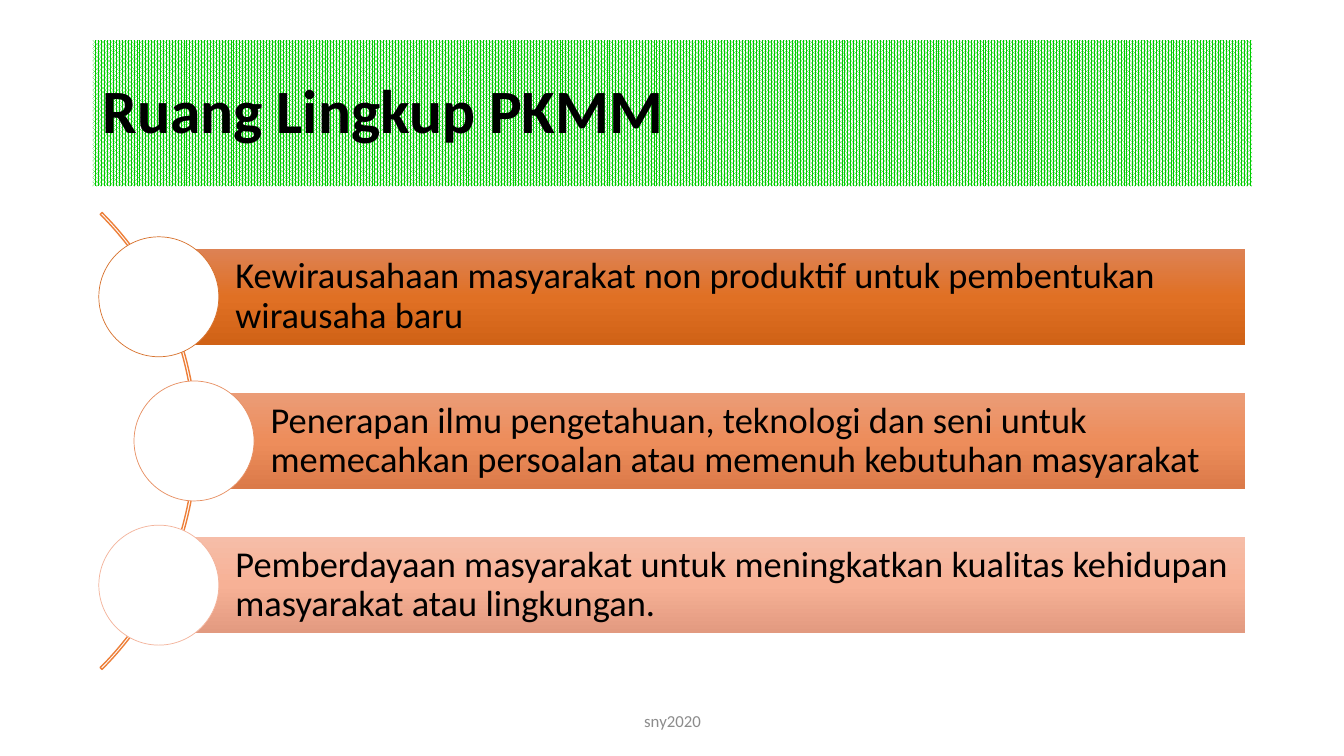
from copy import deepcopy

from pptx import Presentation
from pptx import util as u
from pptx.dml.color import RGBColor
from pptx.enum import dml, shapes, text

FONT = "Calibri"
BLACK, WHITE, GREY = "000000", "FFFFFF", "8C8C8C"
GREEN, ARC_ORANGE = "00CC00", "ED7F39"

# Horizontal and vertical values are percentages of the slide's width and height.
ARC_CENTER_X, ARC_WIDTH, ARC_HEIGHT = -9.41, 48.09, 85.47
MIDDLE_Y, ROW_PITCH = 58.33, 19.07
BAR_RIGHT, BAR_HEIGHT = 92.65, 12.7
CIRCLE_WIDTH, CIRCLE_HEIGHT = 8.93, 15.87
OUTER_X, INNER_X = 11.82, 14.44

# Circle centre, circle outline, bar gradient, wording
SCOPES = [
    (OUTER_X, "D7712C", ("DD8254", "E07024", "D06216"),
     "Kewirausahaan masyarakat non produktif untuk pembentukan wirausaha baru"),
    (INNER_X, "E78F62", ("EB9C77", "ED8D5B", "DB7A49"),
     "Penerapan ilmu pengetahuan, teknologi dan seni untuk memecahkan "
     "persoalan atau memenuh kebutuhan masyarakat"),
    (OUTER_X, "F3B39B", ("F6BDA8", "F7B196", "E29A80"),
     "Pemberdayaan masyarakat untuk meningkatkan kualitas kehidupan "
     "masyarakat atau lingkungan."),
]


def color(hex_string):
    return RGBColor.from_string(hex_string)


class SlideBuilder:
    def __init__(self):
        self.presentation = Presentation()
        self.presentation.slide_width = u.Inches(13.33)
        self.presentation.slide_height = u.Inches(7.5)
        layout = self.presentation.slide_layouts.get_by_name("Title Only")
        self.slide = self.presentation.slides.add_slide(layout)

    def box(self, left, top, width, height):
        """Turn percentages of the slide into lengths."""
        across = self.presentation.slide_width / 100
        down = self.presentation.slide_height / 100
        return (round(left * across), round(top * down),
                round(width * across), round(height * down))

    def add_wording(self, shape, wording, size, ink=BLACK, bold=False,
                    align=text.PP_ALIGN.LEFT, spacing=1.0):
        frame = shape.text_frame
        frame.word_wrap = True
        frame.auto_size = text.MSO_AUTO_SIZE.NONE
        frame.vertical_anchor = text.MSO_ANCHOR.MIDDLE
        paragraph = frame.paragraphs[0]
        paragraph.alignment = align
        paragraph.line_spacing = spacing
        run = paragraph.add_run()
        run.text = wording
        run.font.name = FONT
        run.font.size = u.Pt(size)
        run.font.bold = bold
        run.font.color.rgb = color(ink)

    def title(self, wording, *area):
        title = self.slide.shapes.title
        title.left, title.top, title.width, title.height = self.box(*area)
        title.fill.patterned()
        title.fill.pattern = dml.MSO_PATTERN.PERCENT_80
        title.fill.fore_color.rgb = color(GREEN)
        title.fill.back_color.rgb = color(WHITE)
        self.add_wording(title, wording, 44, bold=True, spacing=0.9)

    def centered_shape(self, kind, center_x, center_y, width, height, outline, weight):
        shape = self.slide.shapes.add_shape(kind, *self.box(
            center_x - width / 2, center_y - height / 2, width, height))
        shape.shadow.inherit = False
        shape.line.color.rgb = color(outline)
        shape.line.width = u.Pt(weight)
        return shape

    def arc(self):
        arc = self.centered_shape(shapes.MSO_SHAPE.BLOCK_ARC, ARC_CENTER_X, MIDDLE_Y,
                                  ARC_WIDTH, ARC_HEIGHT, ARC_ORANGE, 1)
        arc.fill.background()
        for index, value in enumerate((189, 27, 0.004)):
            arc.adjustments[index] = value

    def circle(self, center_x, center_y, outline):
        circle = self.centered_shape(shapes.MSO_SHAPE.OVAL, center_x, center_y,
                                     CIRCLE_WIDTH, CIRCLE_HEIGHT, outline, 0.5)
        circle.fill.solid()
        circle.fill.fore_color.rgb = color(WHITE)

    def bar(self, left, center_y, shades, wording):
        bar = self.slide.shapes.add_shape(shapes.MSO_SHAPE.RECTANGLE, *self.box(
            left, center_y - BAR_HEIGHT / 2, BAR_RIGHT - left, BAR_HEIGHT))
        bar.shadow.inherit = False
        bar.line.fill.background()
        self.shade(bar, shades)
        frame = bar.text_frame
        frame.margin_left = u.Inches(0.76)
        frame.margin_top = frame.margin_right = frame.margin_bottom = u.Inches(0.07)
        self.add_wording(bar, wording, 26, spacing=0.9)

    def shade(self, shape, shades):
        """Fill from top to bottom with three evenly spaced colours."""
        shape.fill.gradient()
        shape.fill.gradient_angle = 270
        first_stop = shape._element.spPr.xpath("a:gradFill/a:gsLst/a:gs")[0]
        first_stop.addnext(deepcopy(first_stop))
        for index, stop in enumerate(shape.fill.gradient_stops):
            stop.position = index / 2
            stop.color.rgb = color(shades[index])

    def footer(self, wording, *area):
        footer = self.slide.shapes.add_textbox(*self.box(*area))
        self.add_wording(footer, wording, 12, GREY, align=text.PP_ALIGN.CENTER)


def main():
    builder = SlideBuilder()
    builder.title("Ruang Lingkup PKMM", 6.9, 5.33, 86.27, 19.33)
    builder.arc()
    for row, (center_x, outline, shades, wording) in enumerate(SCOPES):
        center_y = MIDDLE_Y + (row - 1) * ROW_PITCH
        builder.bar(center_x, center_y, shades, wording)
        builder.circle(center_x, center_y, outline)
    builder.footer("sny2020", 33.16, 92.67, 33.76, 5.33)
    builder.presentation.save("out.pptx")


if __name__ == "__main__":
    main()
